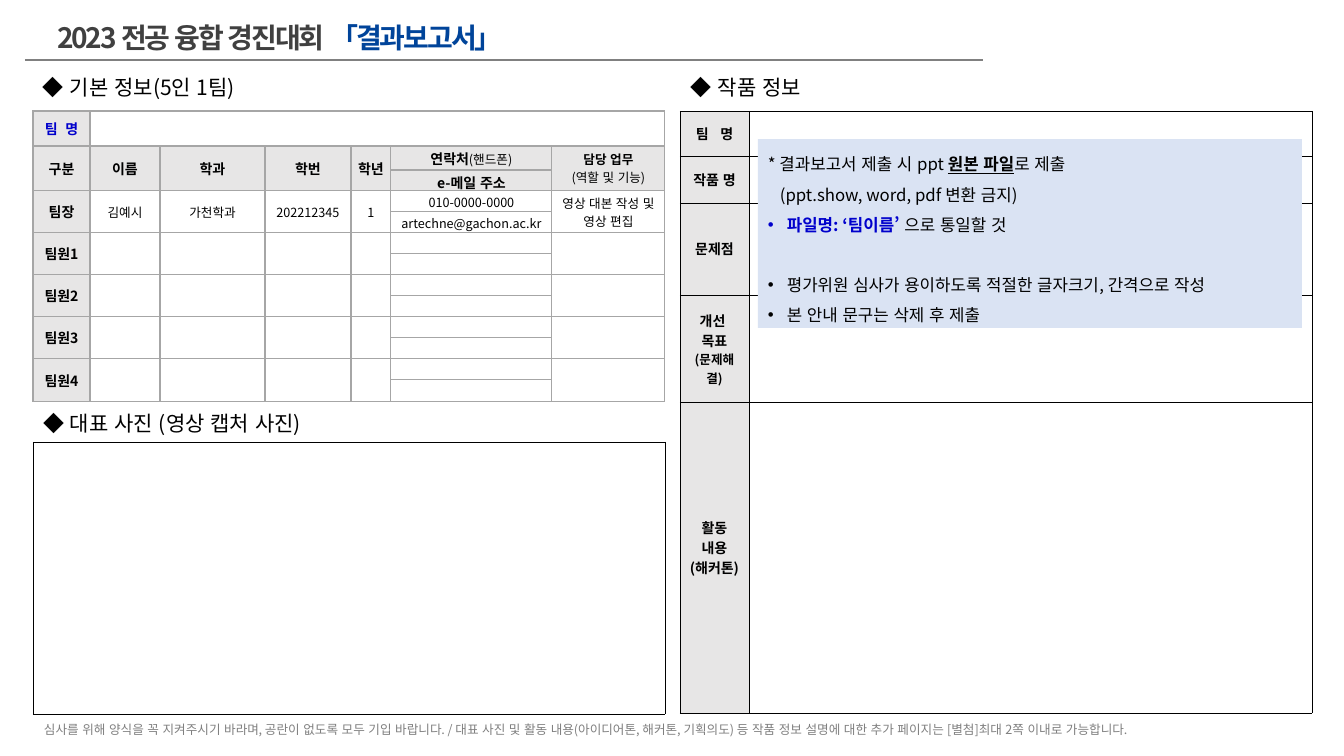
from dataclasses import dataclass, field

import pptx
import pptx.dml.color
import pptx.enum.shapes
import pptx.enum.text
import pptx.oxml
import pptx.oxml.ns
import pptx.util
from lxml import etree

EMU_PER_PX = 914400 / 100.8
FONT = "Noto Sans CJK KR"
COLORS = {
    "black": "000000", "title": "404040", "navy": "00449A", "blue": "0000CC",
    "gray": "808080", "outline": "A7A7A7", "label": "E7E6E6",
    "border": "A6A6A6", "white": "FFFFFF", "notice": "DAE3F3",
}
LEADER = {1: "김예시", 2: "가천학과", 3: "202212345", 4: "1",
          5: "010-0000-0000", 6: "영상 대본 작성 및 영상 편집"}
LEADER_MAIL = "artechne@gachon.ac.kr"
CENTER = pptx.enum.text.PP_ALIGN.CENTER
MIDDLE = pptx.enum.text.MSO_ANCHOR.MIDDLE
qn = pptx.oxml.ns.qn


@dataclass(frozen=True)
class Phrase:
    text: str
    style: dict = field(default_factory=dict)


@dataclass(frozen=True)
class Entry:
    row: int
    column: int
    lines: tuple = ()
    fill: str = ""
    rows: int = 1
    columns: int = 1
    bottom: int = 2


@dataclass(frozen=True)
class Heading:
    text: str
    box: tuple[int, int, int, int]


@dataclass(frozen=True)
class Advice:
    phrases: tuple
    bullet: bool = False
    indent: int = 0
    before: float = 0


def px(length: int) -> int:
    return round(length * EMU_PER_PX)


def rgb(name: str) -> pptx.dml.color.RGBColor:
    return pptx.dml.color.RGBColor.from_string(COLORS[name])


def make_line(tag: str, color: str, width: float):
    line = etree.Element(qn(tag), w=str(pptx.util.Pt(width)))
    solid = etree.SubElement(line, qn("a:solidFill"))
    etree.SubElement(solid, qn("a:srgbClr"), val=COLORS[color])
    return line


def add_text(paragraph, text: str, *, size: float = 10, color: str = "black", bold: bool = False,
             underline: bool = False, spacing: float = 0, outline: str = "") -> None:
    run = paragraph.add_run()
    run.text = text
    run.font.size = pptx.util.Pt(size)
    run.font.bold = bold
    run.font.underline = underline
    run.font.color.rgb = rgb(color)
    run.font.name = FONT
    properties = run._r.get_or_add_rPr()
    properties.set("lang", "ko-KR")
    properties.set("altLang", "en-US")
    properties.set("kern", "0")
    properties.find(qn("a:latin")).addnext(etree.Element(qn("a:ea"), typeface=FONT))
    if spacing:
        properties.set("spc", str(round(spacing * 100)))
    if outline:
        properties.insert(0, make_line("a:ln", outline, 0.75))


def add_box(slide, box: tuple[int, int, int, int], phrases: list[Phrase],
            inset: tuple[int, int] = (5, 5)) -> None:
    frame = slide.shapes.add_textbox(*map(px, box)).text_frame
    frame.word_wrap = True
    frame.margin_left = frame.margin_right = px(inset[0])
    frame.margin_top = frame.margin_bottom = px(inset[1])
    for phrase in phrases:
        add_text(frame.paragraphs[0], phrase.text, **phrase.style)


def add_grid(slide, corner: tuple[int, int], widths: list[int], heights: list[int],
             entries: list[Entry], border: str, border_width: float) -> None:
    grid = slide.shapes.add_table(len(heights), len(widths), *map(px, (*corner, sum(widths), sum(heights)))).table
    grid.first_row = grid.horz_banding = False
    for column, width in zip(grid.columns, widths):
        column.width = px(width)
    for row, height in zip(grid.rows, heights):
        row.height = px(height)
    by_place = {(entry.row, entry.column): entry for entry in entries}
    for row in range(len(heights)):
        for column in range(len(widths)):
            cell = grid.cell(row, column)
            entry = by_place.get((row, column), Entry(row, column))
            cell.margin_left = cell.margin_right = px(7)
            cell.margin_top, cell.margin_bottom = px(2), px(entry.bottom)
            cell.vertical_anchor = MIDDLE
            for tag in ("a:lnL", "a:lnR", "a:lnT", "a:lnB"):
                cell._tc.get_or_add_tcPr().append(make_line(tag, border, border_width))
            if entry.fill:
                cell.fill.solid()
                cell.fill.fore_color.rgb = rgb(entry.fill)
            else:
                cell.fill.background()
            if entry.rows * entry.columns > 1:
                cell.merge(grid.cell(row + entry.rows - 1, column + entry.columns - 1))
            if not entry.lines:
                etree.SubElement(cell.text_frame.paragraphs[0]._p, qn("a:endParaRPr"), sz="800")
            for index, phrases in enumerate(entry.lines):
                paragraph = cell.text_frame.add_paragraph() if index else cell.text_frame.paragraphs[0]
                paragraph.alignment = CENTER
                for phrase in phrases:
                    add_text(paragraph, phrase.text, **phrase.style)


def label(row: int, column: int, *lines: str, rows: int = 1, bottom: int = 2, **style) -> Entry:
    texts = tuple((Phrase(line, {"bold": True, **style}),) for line in lines)
    return Entry(row, column, texts, "label", rows, bottom=bottom)


def team_entries(filled: bool) -> list[Entry]:
    small = {"size": 9}
    small_bold = {"size": 9, "bold": True}
    entries = [label(0, 0, "팀  명", color="blue"), Entry(0, 1, fill="white", columns=6)]
    entries += [label(1, column, text, rows=2)
                for column, text in enumerate(("구분", "이름", "학과", "학번", "학년"))]
    contact = (Phrase("연락처", {"bold": True}), Phrase("(핸드폰)", small))
    duty = ((Phrase("담당 업무", small_bold),), (Phrase("(역할 및 기능)", small),))
    entries += [Entry(1, 5, (contact,), "label"), label(2, 5, "e-메일 주소"), Entry(1, 6, duty, "label", 2)]
    for index, member in enumerate(("팀장", "팀원1", "팀원2", "팀원3", "팀원4")):
        row = 3 + 2 * index
        entries.append(label(row, 0, member, rows=2))
        for column, text in LEADER.items():
            lines = ((Phrase(text, small),),) if filled and index == 0 else ()
            entries.append(Entry(row, column, lines, rows=1 if column == 5 else 2))
    if filled:
        entries.append(Entry(4, 5, ((Phrase(LEADER_MAIL, small),),)))
    return entries


def work_entries() -> list[Entry]:
    bold = {"bold": True}
    goal = ((Phrase("개선 ", bold),), (Phrase("목표", bold),), (Phrase("(문제해결)", {"size": 9, "bold": True}),))
    return [label(0, 0, "팀   명"), label(1, 0, "작품 명"), label(2, 0, "문제점"),
            Entry(3, 0, goal, "label"), label(4, 0, "활동", "내용", "(해커톤)", bottom=22)]


def add_notice(slide, box: tuple[int, int, int, int], advices: list[Advice]) -> None:
    notice = slide.shapes.add_shape(pptx.enum.shapes.MSO_SHAPE.RECTANGLE, *map(px, box))
    notice.shadow.inherit = False
    notice.fill.solid()
    notice.fill.fore_color.rgb = rgb("notice")
    notice.line.fill.background()
    frame = notice.text_frame
    frame.word_wrap = True
    frame.vertical_anchor = pptx.enum.text.MSO_ANCHOR.TOP
    for index, advice in enumerate(advices):
        paragraph = frame.add_paragraph() if index else frame.paragraphs[0]
        paragraph.alignment = pptx.enum.text.PP_ALIGN.LEFT
        paragraph.line_spacing = 1.5
        if advice.before:
            paragraph.space_before = pptx.util.Pt(advice.before)
        properties = paragraph._p.get_or_add_pPr()
        properties.set("marL", str(px(advice.indent)))
        properties.set("indent", str(-px(advice.indent) if advice.bullet else 0))
        if advice.bullet:
            etree.SubElement(properties, qn("a:buFont"), typeface="Arial")
            etree.SubElement(properties, qn("a:buChar"), char="•")
        for phrase in advice.phrases:
            add_text(paragraph, phrase.text, size=12, **phrase.style)


def main() -> None:
    deck = pptx.Presentation()
    deck.slide_width, deck.slide_height = px(1344), px(756)
    slide = deck.slides.add_slide(deck.slide_layouts[6])

    title = {"size": 20, "bold": True, "spacing": -1.5}
    add_box(slide, (48, 15, 964, 44), [
        Phrase("2023 전공 융합 경진대회 ", {**title, "color": "title"}),
        Phrase("「결과보고서」", {**title, "color": "navy", "outline": "outline"})], (9, 5))
    add_box(slide, (39, 717, 1273, 25), [Phrase(
        "심사를 위해 양식을 꼭 지켜주시기 바라며, 공란이 없도록 모두 기입 바랍니다. / "
        "대표 사진 및 활동 내용(아이디어톤, 해커톤, 기획의도) 등 작품 정보 설명에 대한 "
        "추가 페이지는 [별첨]최대 2쪽 이내로 가능합니다.", {"size": 9, "color": "gray"})])
    for heading in (Heading("◆ 대표 사진 (영상 캡처 사진)", (33, 406, 313, 35)),
                    Heading("◆ 기본 정보(5인 1팀)", (33, 70, 354, 35)),
                    Heading("◆ 작품 정보", (681, 70, 157, 35))):
        add_box(slide, heading.box, [Phrase(heading.text, {"size": 15})], (10, 5))

    title_rule = slide.shapes.add_connector(
        pptx.enum.shapes.MSO_CONNECTOR.STRAIGHT, *map(px, (25, 60, 983, 60)))
    title_rule.line.color.rgb = rgb("gray")
    title_rule.line.width = pptx.util.Pt(1)
    etree.SubElement(title_rule._element.spPr, qn("a:effectLst"))

    add_grid(slide, (680, 111), [69, 563], [45, 47, 92, 107, 311], work_entries(), "black", 0.28)
    for filled in (False, True):
        add_grid(slide, (33, 111), [57, 70, 105, 86, 40, 161, 113], [35, 24, 20] + [21] * 9 + [22],
                 team_entries(filled), "border", 1)
    add_grid(slide, (33, 442), [632], [272], [], "black", 0.28)

    add_notice(slide, (758, 139, 544, 189), [
        Advice((Phrase("* 결과보고서 제출 시 ppt "),
                Phrase("원본 파일", {"bold": True, "underline": True}), Phrase("로 제출"))),
        Advice((Phrase("(ppt.show, word, pdf 변환 금지)"),), indent=12),
        Advice((Phrase("파일명: ‘팀이름’ ", {"color": "blue", "bold": True}),
                Phrase("으로 통일할 것")), True, 19),
        Advice((Phrase("평가위원 심사가 용이하도록 적절한 글자크기, 간격으로 작성"),), True, 19, 21.5),
        Advice((Phrase("본 안내 문구는 삭제 후 제출"),), True, 19)])
    deck.save("out.pptx")


if __name__ == "__main__":
    main()
